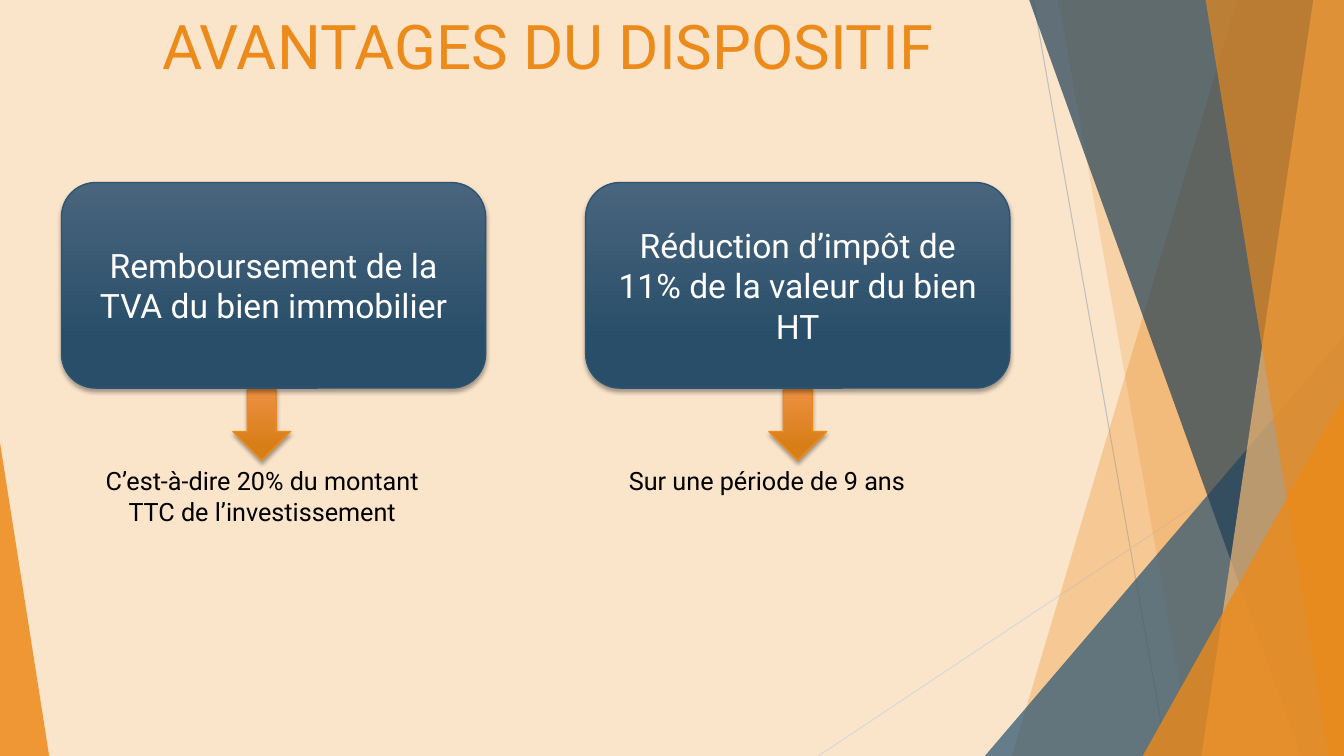
from dataclasses import dataclass

from lxml import etree
from pptx import Presentation
from pptx.dml.color import RGBColor
from pptx.enum.shapes import MSO_CONNECTOR as Connector, MSO_SHAPE as Shape
from pptx.enum.text import MSO_ANCHOR as Anchor, MSO_AUTO_SIZE as AutoSize, PP_ALIGN as Align
from pptx.oxml import parse_xml
from pptx.oxml.ns import nsdecls, qn
from pptx.util import Cm, Pt


@dataclass(frozen=True)
class Theme:
    font: str = "Roboto"
    title_size: int = 44
    card_size: int = 24
    caption_size: int = 18
    background: str = "FAE4CA"
    orange: str = "EC8A1A"
    pale_orange: str = "F4B976"
    blue: str = "2C5573"
    dark_blue: str = "214056"
    white: str = "FFFFFF"
    black: str = "000000"
    card_gradient: tuple = ("49647D", "284E69")
    arrow_gradient: tuple = ("ED9142", "D87E18")


theme = Theme()
WIDTH, HEIGHT, TOP = 33.87, 19.05, -0.02


def add_raised_shape(kind, left, top, width, height, gradient, outline):
    """Add a shape with a downward gradient, a thin outline and a soft shadow."""
    shape = slide.shapes.add_shape(kind, Cm(left), Cm(top), Cm(width), Cm(height))
    shape.fill.gradient()
    shape.fill.gradient_angle = 270
    for stop, position, color in zip(shape.fill.gradient_stops, (0, 0.78), gradient):
        stop.position = position
        stop.color.rgb = RGBColor.from_string(color)
    shape.line.color.rgb = RGBColor.from_string(outline)
    shape.line.width = Pt(1)
    shape._element.spPr.append(parse_xml(
        f'<a:effectLst {nsdecls("a")}><a:outerShdw blurRad="{Pt(3)}" dist="{Pt(2)}" '
        'dir="5400000" rotWithShape="0"><a:srgbClr val="000000"><a:alpha val="35000"/>'
        '</a:srgbClr></a:outerShdw></a:effectLst>'))
    return shape


def write(shape, text, size, color, align, anchor):
    frame = shape.text_frame
    frame.word_wrap = True
    frame.vertical_anchor = anchor
    frame.text = text
    paragraph = frame.paragraphs[0]
    paragraph.alignment = align
    paragraph.font.name = theme.font
    paragraph.font.size = Pt(size)
    paragraph.font.color.rgb = RGBColor.from_string(color)


presentation = Presentation()
presentation.slide_width, presentation.slide_height = Cm(WIDTH), Cm(HEIGHT)
slide = presentation.slides.add_slide(presentation.slide_layouts[5])
slide.background.fill.solid()
slide.background.fill.fore_color.rgb = RGBColor.from_string(theme.background)

# Thin crossing lines
for x1, y1, x2, y2, color in [
    (26.04, 0, 29.41, HEIGHT, "BFBFBF"),
    (WIDTH, 10.24, 20.62, HEIGHT, "D9D9D9"),
]:
    line = slide.shapes.add_connector(Connector.STRAIGHT, Cm(x1), Cm(y1), Cm(x2), Cm(y2))
    line.line.color.rgb = RGBColor.from_string(color)
    line.line.width = Pt(0.75)
    etree.SubElement(line._element.spPr, qn("a:effectLst"))

# Bands: top x and bottom x of the slanted edge, reaching the right side.
# Triangles: left, top, width and apex position, standing on the bottom.
for kind, geometry, color, opacity in [
    ("band", (31.19, 25.5), theme.orange, 30),
    ("band", (26.67, 30.05), theme.orange, 20),
    ("triangle", (24.82, 8.46, 9.05, 1), theme.blue, 72),
    ("band", (25.93, 32.79), theme.dark_blue, 70),
    ("band", (33.1, 30.28), theme.pale_orange, 70),
    ("band", (30.38, 33.48), theme.orange, 65),
    ("triangle", (28.8, 9.98, 5.07, 1), theme.orange, 80),
    ("triangle", (0, 11.15, 1.24, 0), theme.orange, 85),
]:
    if kind == "band":
        top_x, bottom_x = geometry
        builder = slide.shapes.build_freeform(Cm(top_x), Cm(TOP))
        corners = [(WIDTH, TOP), (WIDTH, HEIGHT), (bottom_x, HEIGHT)]
        builder.add_line_segments([(Cm(x), Cm(y)) for x, y in corners], close=True)
        facet = builder.convert_to_shape()
    else:
        left, top, width, apex = geometry
        facet = slide.shapes.add_shape(
            Shape.ISOSCELES_TRIANGLE, Cm(left), Cm(top), Cm(width), Cm(HEIGHT - top))
        facet.adjustments[0] = apex
    facet.shadow.inherit = False
    facet.line.fill.background()
    facet.fill.solid()
    facet.fill.fore_color.rgb = RGBColor.from_string(color)
    color_element = facet._element.spPr.find(qn("a:solidFill"))[0]
    etree.SubElement(color_element, qn("a:alpha"), val=str(opacity * 1000))

title = slide.shapes.title
title.left, title.top, title.width, title.height = Cm(1.88), Cm(0), Cm(23.88), Cm(2.24)
write(title, "AVANTAGES DU DISPOSITIF", theme.title_size, theme.orange,
      Align.CENTER, Anchor.MIDDLE)
title.text_frame.auto_size = AutoSize.NONE

for arrow_left in (5.87, 19.38):
    add_raised_shape(Shape.DOWN_ARROW, arrow_left, 9.8, 1.45, 1.8,
                     theme.arrow_gradient, theme.orange)

for card_left, advantage, caption_box, detail, align in [
    (1.55, "Remboursement de la TVA du bien immobilier", (2.24, 8.74, 1.8),
     "C’est-à-dire 20% du montant TTC de l’investissement", Align.CENTER),
    (14.76, "Réduction d’impôt de 11% de la valeur du bien HT", (15.6, 9.07, 1.02),
     "Sur une période de 9 ans", Align.LEFT),
]:
    card = add_raised_shape(Shape.ROUNDED_RECTANGLE, card_left, 4.6, 10.69, 5.18,
                            theme.card_gradient, theme.blue)
    write(card, advantage, theme.card_size, theme.white, Align.CENTER, Anchor.MIDDLE)
    left, width, height = caption_box
    caption = slide.shapes.add_textbox(Cm(left), Cm(11.61), Cm(width), Cm(height))
    write(caption, detail, theme.caption_size, theme.black, align, Anchor.TOP)
    caption.text_frame.auto_size = AutoSize.SHAPE_TO_FIT_TEXT

presentation.save("out.pptx")
